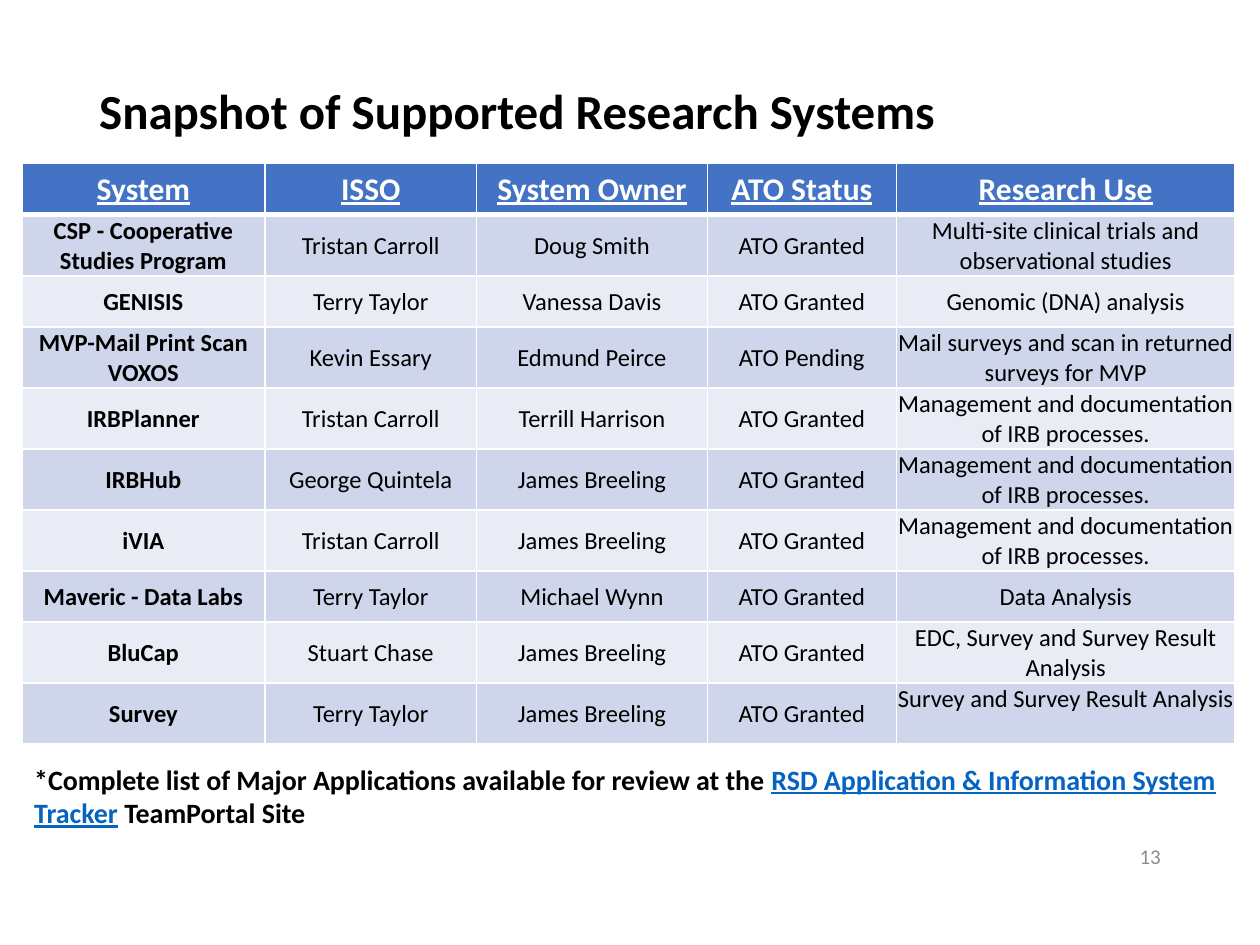
from dataclasses import dataclass

from lxml import etree
from pptx import Presentation
from pptx import util as u
from pptx.dml.color import RGBColor
from pptx.enum import text
from pptx.oxml import ns

FONT = "Calibri"
COLORS = {
    "ink": "000000",
    "white": "FFFFFF",
    "header": "4472C4",
    "band_dark": "CFD5EA",
    "band_light": "E9EBF5",
    "link": "0563C1",
    "number": "8C8C8C",
}
ONE_LINE, TWO_LINES = u.Cm(1.03), u.Cm(1.23)
COLUMN_WIDTHS = [u.Cm(width) for width in (4.9, 4.27, 4.65, 3.81, 6.83)]
TABLE_LEFT, TABLE_TOP = u.Cm(0.44), u.Cm(3.3)
HEADINGS = ("System", "ISSO", "System Owner", "ATO Status", "Research Use")
IRB_USE = "Management and documentation of IRB processes."


@dataclass(frozen=True)
class System:
    name: str
    officer: str
    owner: str
    use: str
    status: str = "ATO Granted"
    height: int = TWO_LINES
    use_anchor: text.MSO_ANCHOR = text.MSO_ANCHOR.MIDDLE

    def values(self) -> tuple[str, ...]:
        return self.name, self.officer, self.owner, self.status, self.use


SYSTEMS = [
    System("CSP - Cooperative Studies Program", "Tristan Carroll", "Doug Smith",
           "Multi-site clinical trials and observational studies"),
    System("GENISIS", "Terry Taylor", "Vanessa Davis", "Genomic (DNA) analysis",
           height=ONE_LINE),
    System("MVP-Mail Print Scan VOXOS", "Kevin Essary", "Edmund Peirce",
           "Mail surveys and scan in returned surveys for MVP", status="ATO Pending"),
    System("IRBPlanner", "Tristan Carroll", "Terrill Harrison", IRB_USE),
    System("IRBHub", "George Quintela", "James Breeling", IRB_USE),
    System("iVIA", "Tristan Carroll", "James Breeling", IRB_USE),
    System("Maveric - Data Labs", "Terry Taylor", "Michael Wynn", "Data Analysis",
           height=ONE_LINE),
    System("BluCap", "Stuart Chase", "James Breeling",
           "EDC, Survey and Survey Result Analysis"),
    System("Survey", "Terry Taylor", "James Breeling",
           "Survey and Survey Result Analysis", use_anchor=text.MSO_ANCHOR.TOP),
]


def add_span(para, words: str, *, size: float, color: str = "ink",
             bold: bool = False, underline: bool = False) -> None:
    span = para.add_run()
    span.text = words
    font = span.font
    font.name, font.size = FONT, u.Pt(size)
    font.bold, font.underline = bold, underline
    font.color.rgb = RGBColor.from_string(COLORS[color])


def add_box(page, left: float, top: float, width: float, height: float,
            anchor=text.MSO_ANCHOR.TOP):
    """Add a wrapping text box, measured in centimetres; return its paragraph."""
    box = page.shapes.add_textbox(u.Cm(left), u.Cm(top), u.Cm(width), u.Cm(height))
    box.text_frame.word_wrap = True
    box.text_frame.vertical_anchor = anchor
    return box.text_frame.paragraphs[0]


def add_borders(cell, *, top: float = 1, bottom: float = 1) -> None:
    """Draw white cell borders, with widths in points."""
    properties = cell._tc.get_or_add_tcPr()
    for side, width in (("L", 1), ("R", 1), ("T", top), ("B", bottom)):
        line = etree.SubElement(properties, ns.qn(f"a:ln{side}"), w=str(u.Pt(width)))
        fill = etree.SubElement(line, ns.qn("a:solidFill"))
        etree.SubElement(fill, ns.qn("a:srgbClr"), val=COLORS["white"])


def fill_cell(cell, words: str, *, fill: str, anchor=text.MSO_ANCHOR.MIDDLE,
              top: float = 1, bottom: float = 1, **font) -> None:
    add_borders(cell, top=top, bottom=bottom)
    cell.fill.solid()
    cell.fill.fore_color.rgb = RGBColor.from_string(COLORS[fill])
    cell.margin_left = cell.margin_right = cell.margin_top = u.Cm(0.02)
    cell.margin_bottom = 0
    cell.vertical_anchor = anchor
    para = cell.text_frame.paragraphs[0]
    para.alignment = text.PP_ALIGN.CENTER
    add_span(para, words, **font)


def add_systems_table(page) -> None:
    heights = [ONE_LINE] + [system.height for system in SYSTEMS]
    table = page.shapes.add_table(
        len(heights), len(HEADINGS), TABLE_LEFT, TABLE_TOP,
        sum(COLUMN_WIDTHS), sum(heights)).table
    table.horz_banding = False
    for column, width in zip(table.columns, COLUMN_WIDTHS):
        column.width = width
    for row, height in zip(table.rows, heights):
        row.height = height

    for column, heading in enumerate(HEADINGS):
        fill_cell(table.cell(0, column), heading, fill="header", bottom=3,
                  size=18, color="white", bold=True, underline=True)
    last = len(HEADINGS) - 1
    for row, system in enumerate(SYSTEMS, start=1):
        for column, value in enumerate(system.values()):
            fill_cell(table.cell(row, column), value,
                      fill="band_dark" if row % 2 else "band_light",
                      anchor=system.use_anchor if column == last else text.MSO_ANCHOR.MIDDLE,
                      top=3 if row == 1 else 1, size=14, bold=column == 0)


def main() -> None:
    deck = Presentation()
    deck.slide_width, deck.slide_height = u.Cm(25.4), u.Cm(19.05)
    page = deck.slides.add_slide(deck.slide_layouts[6])

    number = add_box(page, 17.93, 16.74, 5.72, 1.02, text.MSO_ANCHOR.MIDDLE)
    number.alignment = text.PP_ALIGN.RIGHT
    add_span(number, "13", size=12, color="number")

    title = add_box(page, 1.75, 1.04, 22.81, 1.9, text.MSO_ANCHOR.BOTTOM)
    title.line_spacing = 0.9
    add_span(title, "Snapshot of Supported Research Systems", size=28, bold=True)

    add_systems_table(page)

    note = add_box(page, 0.44, 15.24, 24.46, 1.63)
    add_span(note, "*Complete list of Major Applications available for review at the ",
             size=16, bold=True)
    add_span(note, "RSD Application & Information System Tracker",
             size=16, color="link", bold=True, underline=True)
    add_span(note, " TeamPortal Site", size=16, bold=True)

    deck.save("out.pptx")


if __name__ == "__main__":
    main()
